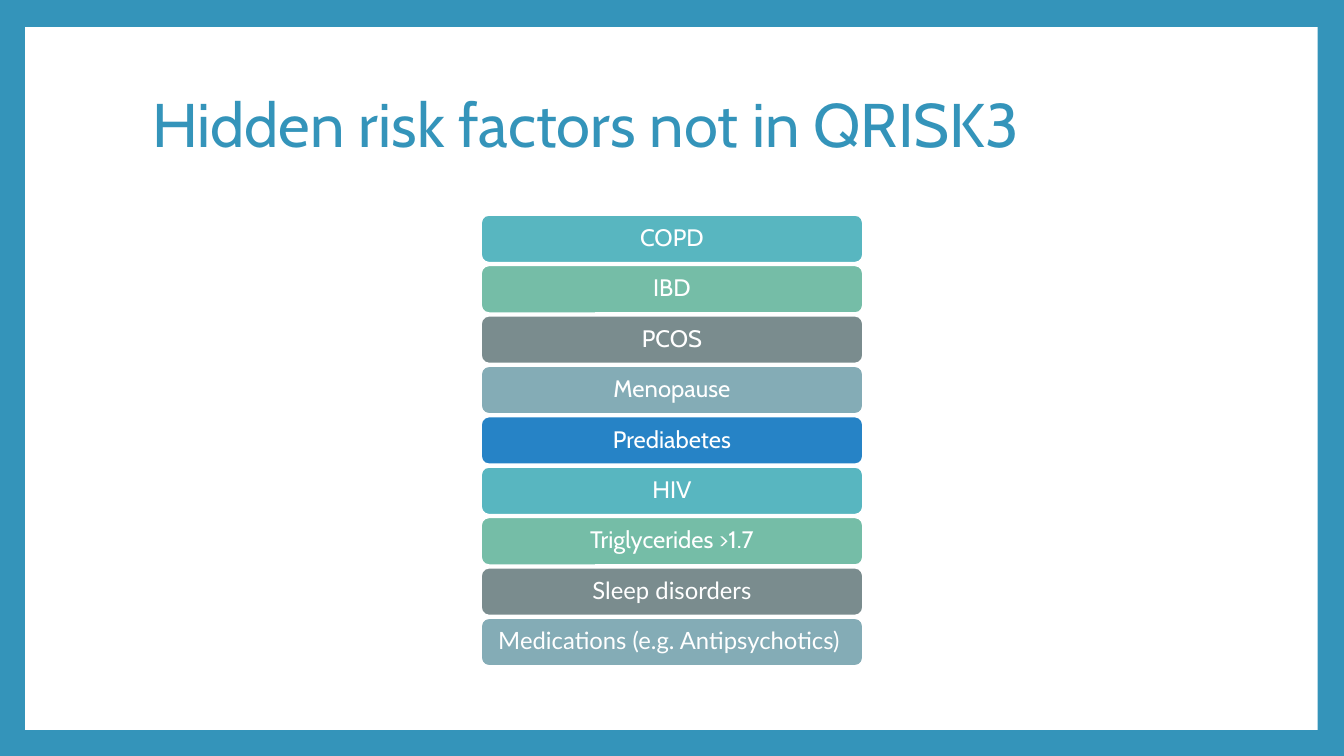
"""Build the slide on risk factors that QRISK3 leaves out."""
import pptx
import pptx.util
import pptx.dml.color
import pptx.enum.shapes
import pptx.enum.text

Pt = pptx.util.Pt
SHAPE = pptx.enum.shapes.MSO_SHAPE
ALIGN = pptx.enum.text.PP_ALIGN

BLUE, WHITE = "3494BA", "FFFFFF"
BAR_COLORS = ["58B6C0", "75BDA7", "7A8C8E", "84ACB6", "2683C6"]
RISK_FACTORS = [
    ("COPD", "Cabin"),
    ("IBD", "Cabin"),
    ("PCOS", "Cabin"),
    ("Menopause", "Cabin"),
    ("Prediabetes", "Cabin"),
    ("HIV", "Cabin"),
    ("Triglycerides >1.7", "Cabin"),
    ("Sleep disorders", "Lato"),
    ("Medications (e.g. Antipsychotics) ", "Lato"),
]
BAR_LEFT, BAR_TOP, BAR_WIDTH, BAR_HEIGHT, BAR_PITCH = 343.5, 153.4, 273, 34.4, 36


def rgb(value):
    """Turn a hex string into a colour."""
    return pptx.dml.color.RGBColor.from_string(value)


def add_box(s, kind, left, top, width, height, fill, line=None):
    """Add a flat filled shape, with an outline if a colour is given."""
    sp = s.shapes.add_shape(kind, Pt(left), Pt(top), Pt(width), Pt(height))
    sp.shadow.inherit = False
    sp.fill.solid()
    sp.fill.fore_color.rgb = rgb(fill)
    if line:
        sp.line.color.rgb = rgb(line)
        sp.line.width = Pt(1.5)
    else:
        sp.line.fill.background()
    return sp


def set_text(sp, text, font, size, color, align):
    """Write one vertically centred paragraph into a shape."""
    tf = sp.text_frame
    tf.word_wrap = True
    tf.vertical_anchor = pptx.enum.text.MSO_ANCHOR.MIDDLE
    p = tf.paragraphs[0]
    p.alignment = align
    p.line_spacing = 0.9
    r = p.add_run()
    r.text = text
    r.font.name = font
    r.font.size = Pt(size)
    r.font.color.rgb = rgb(color)


def add_title(s, text):
    """Add the slide title."""
    sp = s.shapes.add_textbox(Pt(101.5), Pt(48.2), Pt(802.8), Pt(86.4))
    set_text(sp, text, "Cabin", 44, BLUE, ALIGN.LEFT)


def add_bar(s, row, text, font):
    """Add one risk factor bar at its place in the stack."""
    fill = BAR_COLORS[row % len(BAR_COLORS)]
    sp = add_box(s, SHAPE.ROUNDED_RECTANGLE, BAR_LEFT, BAR_TOP + row * BAR_PITCH,
                 BAR_WIDTH, BAR_HEIGHT, fill, WHITE)
    tf = sp.text_frame
    tf.margin_left = tf.margin_right = Pt(5)
    tf.margin_top = tf.margin_bottom = Pt(2.5)
    set_text(sp, text, font, 17, WHITE, ALIGN.CENTER)


def main():
    """Build and save the slide."""
    prs = pptx.Presentation()
    prs.slide_width, prs.slide_height = Pt(960), Pt(540)
    s = prs.slides.add_slide(prs.slide_layouts[6])
    s.background.fill.solid()
    s.background.fill.fore_color.rgb = rgb(BLUE)
    add_box(s, SHAPE.RECTANGLE, 18, 19.3, 923.2, 502, WHITE)
    add_title(s, "Hidden risk factors not in QRISK3")
    for row, (text, font) in enumerate(RISK_FACTORS):
        add_bar(s, row, text, font)
    prs.save("out.pptx")


if __name__ == "__main__":
    main()
